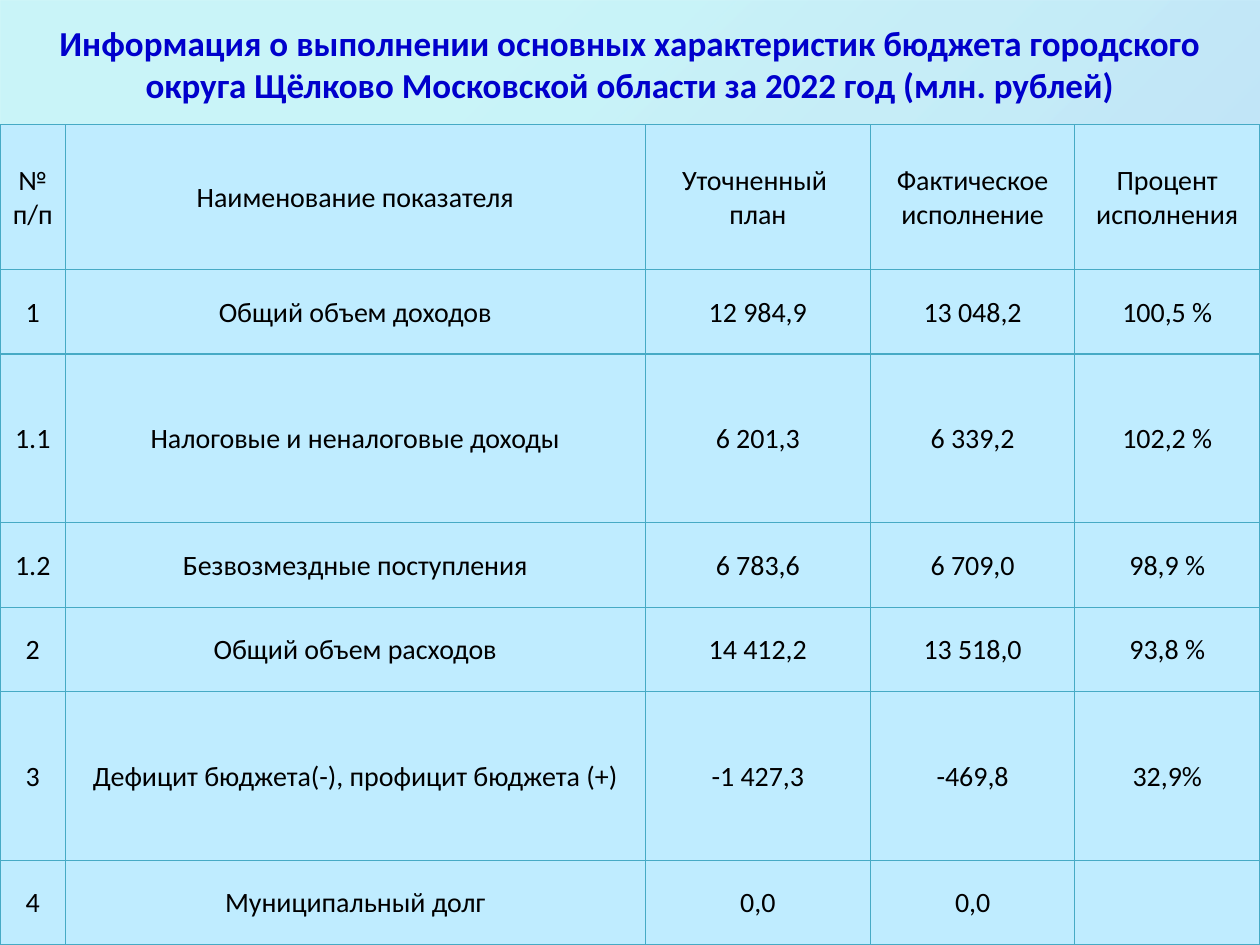
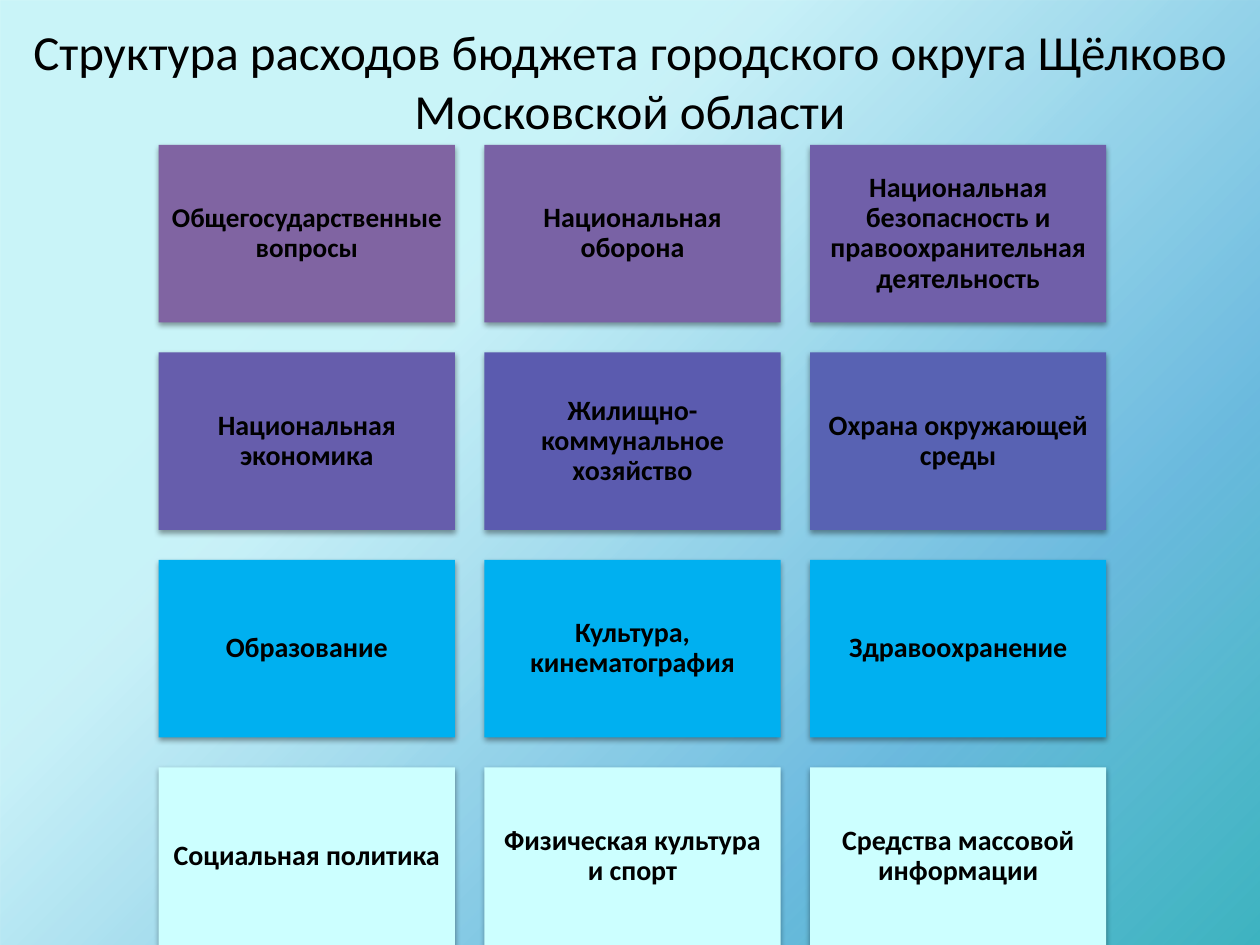
import dataclasses

import lxml.etree
import pptx
import pptx.dml.color
import pptx.enum.shapes
import pptx.enum.text
import pptx.oxml.ns
import pptx.util

Inches = pptx.util.Inches
Pt = pptx.util.Pt
RGB = pptx.dml.color.RGBColor.from_string
qn = pptx.oxml.ns.qn


@dataclasses.dataclass(frozen=True)
class Theme:
    font: str = "Calibri"
    black: str = "000000"
    title_blue: str = "0000CC"
    cell_fill: str = "BFECFF"
    cell_border: str = "46AAC5"
    report_title_size: float = 20
    structure_title_size: float = 28
    body_size: float = 16
    tight_size: float = 15.5
    # Gradient stops: position %, colour, opacity %
    veil: tuple = ((25, "21D6E0", 23), (75, "0087E6", 25),
                   (100, "03D4A8", 18), (100, "005CBF", 26))
    teal_page: tuple = ((0, "FFFFFF", 100), (35, "FFFFFF", 100),
                        (100, "4BACC6", 100))


theme = Theme()


def write_text(frame, text, holder=None, size=theme.body_size, color=theme.black,
               bold=False, line_spacing=None, insets=(0.1, 0.05, 0.1, 0.05)):
    """Write centred text; holder carries anchor and insets (a cell, or the frame)."""
    holder = holder or frame
    holder.vertical_anchor = pptx.enum.text.MSO_ANCHOR.MIDDLE
    (holder.margin_left, holder.margin_top,
     holder.margin_right, holder.margin_bottom) = map(Inches, insets)
    frame.word_wrap = True
    frame.text = text
    for para in frame.paragraphs:
        para.alignment = pptx.enum.text.PP_ALIGN.CENTER
        para.line_spacing = line_spacing
        for span in para.runs:
            span.font.name = theme.font
            span.font.size = Pt(size)
            span.font.bold = bold
            span.font.color.rgb = RGB(color)


def paint_gradient(fill, owner, stops):
    """Fill with a diagonal gradient; owner is the element that holds the fill."""
    fill.gradient()
    fill.gradient_angle = 315
    stop_list = owner.find(".//" + qn("a:gsLst"))
    for old_stop in list(stop_list):
        stop_list.remove(old_stop)
    for position, color, opacity in stops:
        stop = lxml.etree.SubElement(stop_list, qn("a:gs"), pos=str(position * 1000))
        paint = lxml.etree.SubElement(stop, qn("a:srgbClr"), val=color)
        lxml.etree.SubElement(paint, qn("a:alpha"), val=str(opacity * 1000))


deck = pptx.Presentation()
deck.slide_width, deck.slide_height = Inches(10), Inches(7.5)

# Both pages: tinted veil and title
titles = [
    ("Информация о выполнении основных характеристик бюджета городского округа "
     "Щёлково Московской области за 2022 год (млн. рублей)", 0.12, 0.77,
     {"size": theme.report_title_size, "color": theme.title_blue, "bold": True}),
    ("Структура расходов бюджета городского округа Щёлково Московской области",
     0.01, 1.25, {"size": theme.structure_title_size}),
]
pages = []
for title, top, height, title_format in titles:
    page = deck.slides.add_slide(deck.slide_layouts[6])
    veil = page.shapes.add_shape(pptx.enum.shapes.MSO_SHAPE.RECTANGLE, 0, 0,
                                 deck.slide_width, deck.slide_height)
    veil.shadow.inherit = False
    veil.line.fill.background()
    paint_gradient(veil.fill, veil.element, theme.veil)
    box = page.shapes.add_textbox(0, Inches(top), deck.slide_width, Inches(height))
    write_text(box.text_frame, title, **title_format)
    pages.append(page)
report_page, structure_page = pages

# Budget execution table
budget_rows = [
    ("№ п/п", "Наименование показателя", "Уточненный \nплан",
     "Фактическое исполнение", "Процент исполнения"),
    ("1", "Общий объем доходов", "12 984,9", "13 048,2", "100,5 %"),
    ("1.1", "Налоговые и неналоговые доходы", "6 201,3", "6 339,2", "102,2 %"),
    ("1.2", "Безвозмездные поступления", "6 783,6", "6 709,0", "98,9 %"),
    ("2", "Общий объем расходов", "14 412,2", "13 518,0", "93,8 %"),
    ("3", "Дефицит бюджета(-), профицит бюджета (+)", "-1 427,3", "-469,8", "32,9%"),
    ("4", "Муниципальный долг", "0,0", "0,0", ""),
]
column_widths = [0.52, 4.6, 1.79, 1.62, 1.47]
row_heights = [1.15, 0.67, 1.34, 0.67, 0.67, 1.34, 0.67]
table = report_page.shapes.add_table(
    len(budget_rows), len(column_widths), 0, Inches(0.99),
    Inches(sum(column_widths)), Inches(sum(row_heights))).table
for column, width in zip(table.columns, column_widths):
    column.width = Inches(width)
for row, height, values in zip(table.rows, row_heights, budget_rows):
    row.height = Inches(height)
    for cell, value in zip(row.cells, values):
        write_text(cell.text_frame, value, holder=cell, insets=(0.01, 0.01, 0.01, 0))
        properties = cell.text_frame._txBody.getparent().get_or_add_tcPr()
        for side in ("a:lnL", "a:lnR", "a:lnT", "a:lnB"):
            border = lxml.etree.SubElement(properties, qn(side), w=str(Pt(0.75)))
            paint = lxml.etree.SubElement(border, qn("a:solidFill"))
            lxml.etree.SubElement(paint, qn("a:srgbClr"), val=theme.cell_border)
        cell.fill.solid()
        cell.fill.fore_color.rgb = RGB(theme.cell_fill)

# Expenditure sections in a grid of three columns
paint_gradient(structure_page.background.fill, structure_page.element, theme.teal_page)
sections = [
    ("Общегосударственные вопросы", "8064A2", theme.tight_size),
    ("Национальная оборона", "7962A5", theme.body_size),
    ("Национальная безопасность и правоохранительная деятельность", "705FA9",
     theme.body_size),
    ("Национальная экономика", "665DAC", theme.body_size),
    ("Жилищно-коммунальное хозяйство", "5B5BAF", theme.body_size),
    ("Охрана окружающей среды", "5862B3", theme.body_size),
    ("Образование", "00B0F0", theme.body_size),
    ("Культура, кинематография", "00B0F0", theme.body_size),
    ("Здравоохранение", "00B0F0", theme.body_size),
    ("Социальная политика", "CCFFFF", theme.body_size),
    ("Физическая культура и спорт", "CCFFFF", theme.body_size),
    ("Средства массовой информации", "CCFFFF", theme.body_size),
]
grid_left, grid_top, card_width, card_height = 1.26, 1.15, 2.35, 1.41
column_step = (6.43 - grid_left) / 2
row_step = (7.5 - card_height - grid_top) / 3
for index, (name, color, size) in enumerate(sections):
    row, column = divmod(index, 3)
    card = structure_page.shapes.add_shape(
        pptx.enum.shapes.MSO_SHAPE.RECTANGLE,
        Inches(grid_left + column * column_step), Inches(grid_top + row * row_step),
        Inches(card_width), Inches(card_height))
    card.fill.solid()
    card.fill.fore_color.rgb = RGB(color)
    card.line.fill.background()
    card.shadow.inherit = False
    shadow = lxml.etree.SubElement(
        card.element.spPr.find(qn("a:effectLst")), qn("a:outerShdw"),
        blurRad=str(Pt(3.1)), dist=str(Pt(1.6)), dir="5400000", rotWithShape="0")
    paint = lxml.etree.SubElement(shadow, qn("a:srgbClr"), val=theme.black)
    lxml.etree.SubElement(paint, qn("a:alpha"), val="38000")
    write_text(card.text_frame, name, size=size, bold=True, line_spacing=0.9,
               insets=(0.07, 0.07, 0.07, 0.07))

deck.save("out.pptx")
